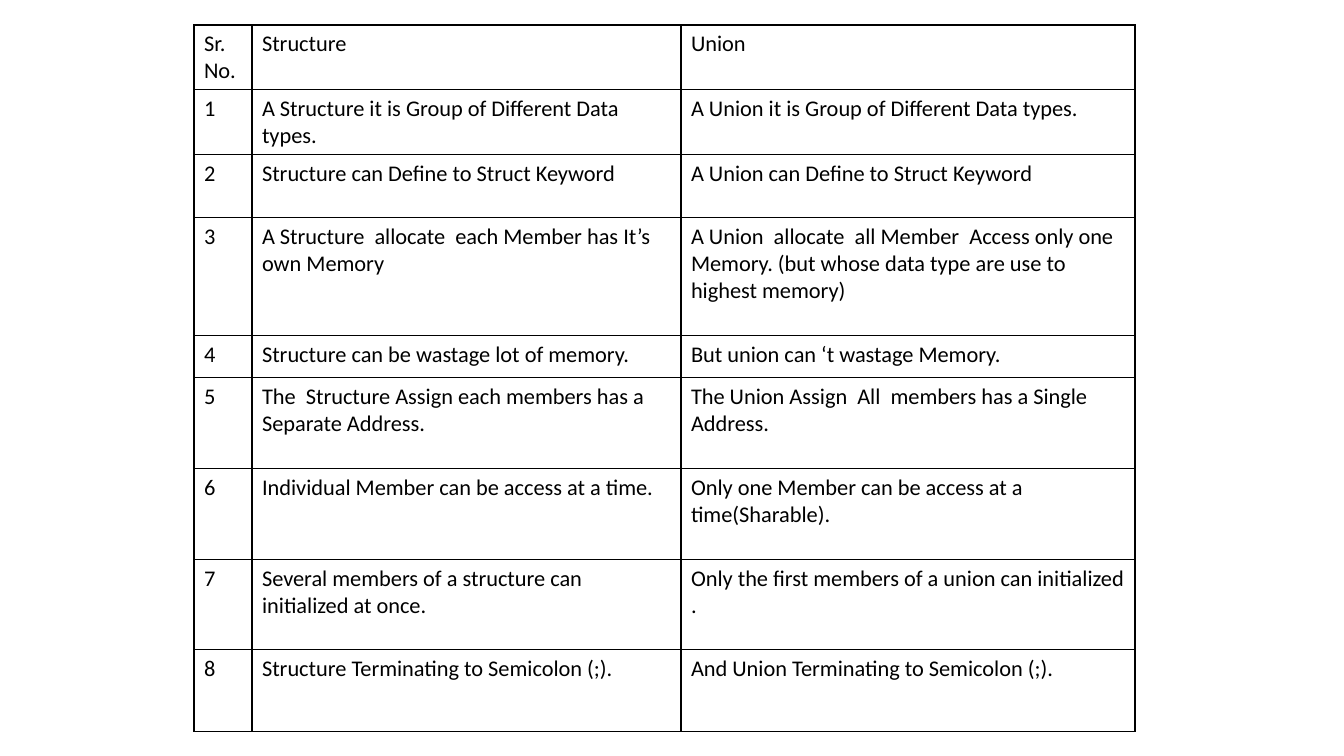
from lxml.etree import SubElement
from pptx import Presentation
from pptx.dml.color import RGBColor
from pptx.oxml.ns import qn
from pptx.util import Pt

EMU_PER_PX = 914400 / 100.8
COLORS = {"ink": "000000"}
FONT = "Calibri"
BLANK_LAYOUT = 6

COLUMN_WIDTHS = [58, 429, 454]
ROW_HEIGHTS = [64, 64, 63, 118, 42, 91, 91, 90, 82]
HEADINGS = ("Sr. No.", "Structure", "Union")
COMPARISONS = [
    ("A Structure it is Group of Different Data types.",
     "A Union it is Group of Different Data types."),
    ("Structure can Define to Struct Keyword",
     "A Union can Define to Struct Keyword"),
    ("A Structure  allocate  each Member has It’s own Memory",
     "A Union  allocate  all Member  Access only one  Memory. "
     "(but whose data type are use to highest memory)"),
    ("Structure can be wastage lot of memory.",
     "But union can ‘t wastage Memory."),
    ("The  Structure Assign each members has a Separate Address.",
     "The Union Assign  All  members has a Single Address."),
    ("Individual Member can be access at a time.",
     "Only one Member can be access at a time(Sharable)."),
    ("Several members of a structure can initialized at once.",
     "Only the first members of a union can initialized ."),
    ("Structure Terminating to Semicolon (;).",
     "And Union Terminating to Semicolon (;)."),
]


def px(length):
    return round(length * EMU_PER_PX)


def add_borders(cell):
    """Line all four sides; borders must precede the fill in the XML."""
    properties = cell._tc.get_or_add_tcPr()
    for side in ("a:lnL", "a:lnR", "a:lnT", "a:lnB"):
        border = SubElement(properties, qn(side), w=str(Pt(1)))
        fill = SubElement(border, qn("a:solidFill"))
        SubElement(fill, qn("a:srgbClr"), val=COLORS["ink"])


def fill_cell(cell, wording):
    add_borders(cell)
    cell.fill.background()
    cell.text_frame.text = wording
    for run in cell.text_frame.paragraphs[0].runs:
        run.font.name = FONT
        run.font.size = Pt(16)
        run.font.bold = False
        run.font.color.rgb = RGBColor.from_string(COLORS["ink"])


def add_comparison_table(slide, left, top, rows):
    frame = slide.shapes.add_table(
        len(rows), len(HEADINGS), px(left), px(top),
        px(sum(COLUMN_WIDTHS)), px(sum(ROW_HEIGHTS)))
    table = frame.table
    table.first_row = False
    table.horz_banding = False
    for column, width in zip(table.columns, COLUMN_WIDTHS):
        column.width = px(width)
    for table_row, height, wordings in zip(table.rows, ROW_HEIGHTS, rows):
        table_row.height = px(height)
        for cell, wording in zip(table_row.cells, wordings):
            fill_cell(cell, wording)


def main():
    presentation = Presentation()
    presentation.slide_width = px(1344)
    presentation.slide_height = px(756)
    slide = presentation.slides.add_slide(
        presentation.slide_layouts[BLANK_LAYOUT])
    numbered = [(str(number), *pair)
                for number, pair in enumerate(COMPARISONS, start=1)]
    add_comparison_table(slide, 194, 25, [HEADINGS, *numbered])
    presentation.save("out.pptx")


if __name__ == "__main__":
    main()
